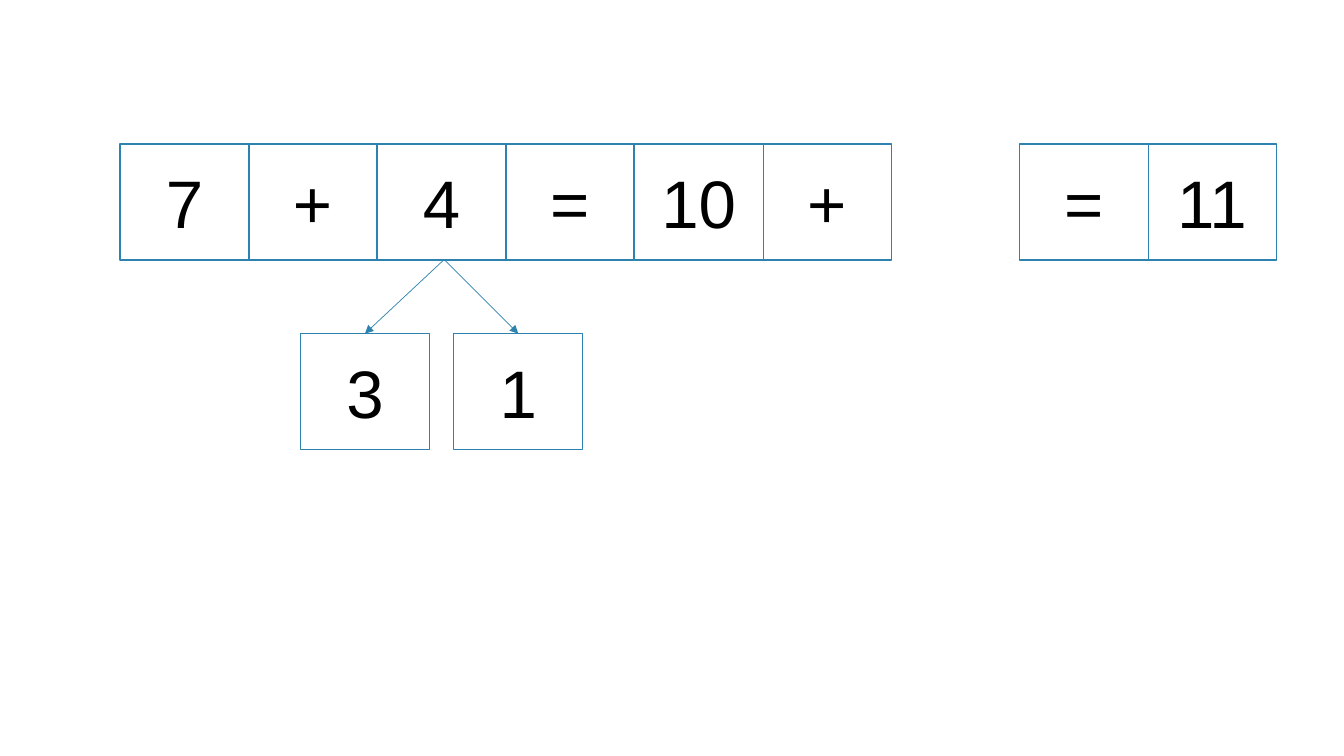
"""Builds a slide that splits 4 into 3 and 1 to add 7 + 4 through ten."""
from pptx import Presentation, util as u
from pptx.dml.color import RGBColor
from pptx.enum import shapes, text
from pptx.oxml.ns import qn
from lxml import etree

SUM = ["7", "+", "4", "=", "10", "+", "", "=", "11"]
PARTS = [("3", 298, 440), ("1", 450, 441)]
LEFT, TOP, STEP = 119, 143, 127.4
WIDE, HIGH = 128, 115
LOW = 331
BLUE, WHITE, BLACK = "2E82AF", "FFFFFF", "000000"


def px(n):
    return u.Emu(round(n) * 9144)


def tint(code):
    return RGBColor.from_string(code)


def box(slide, word, x, y):
    card = slide.shapes.add_shape(
        shapes.MSO_SHAPE.RECTANGLE, px(x), px(y), px(WIDE), px(HIGH))
    card.shadow.inherit = False
    card.fill.solid()
    card.fill.fore_color.rgb = tint(WHITE)
    card.line.color.rgb = tint(BLUE)
    card.line.width = u.Pt(1)
    frame = card.text_frame
    frame.text = word
    frame.vertical_anchor = text.MSO_ANCHOR.MIDDLE
    para = frame.paragraphs[0]
    para.alignment = text.PP_ALIGN.CENTER
    font = para.runs[0].font
    font.name, font.size = "Arial", u.Pt(48)
    font.color.rgb = tint(BLACK)


def arrow(slide, x1, y1, x2, y2):
    link = slide.shapes.add_connector(
        shapes.MSO_CONNECTOR.STRAIGHT, px(x1), px(y1), px(x2), px(y2))
    link.line.color.rgb = tint(BLUE)
    link.line.width = u.Pt(0.5)
    props = link._element.spPr
    etree.SubElement(props.find(qn("a:ln")), qn("a:tailEnd"), type="triangle")
    etree.SubElement(props, qn("a:effectLst"))


def main():
    deck = Presentation()
    deck.slide_width, deck.slide_height = px(1333), px(750)
    slide = deck.slides.add_slide(deck.slide_layouts[6])
    for i, word in reversed(list(enumerate(SUM))):
        if word:
            box(slide, word, LEFT + i * STEP, TOP)
    for word, x, start in PARTS:
        box(slide, word, x, LOW)
        arrow(slide, start, TOP + HIGH, x + WIDE / 2, LOW)
    deck.save("out.pptx")


if __name__ == "__main__":
    main()
